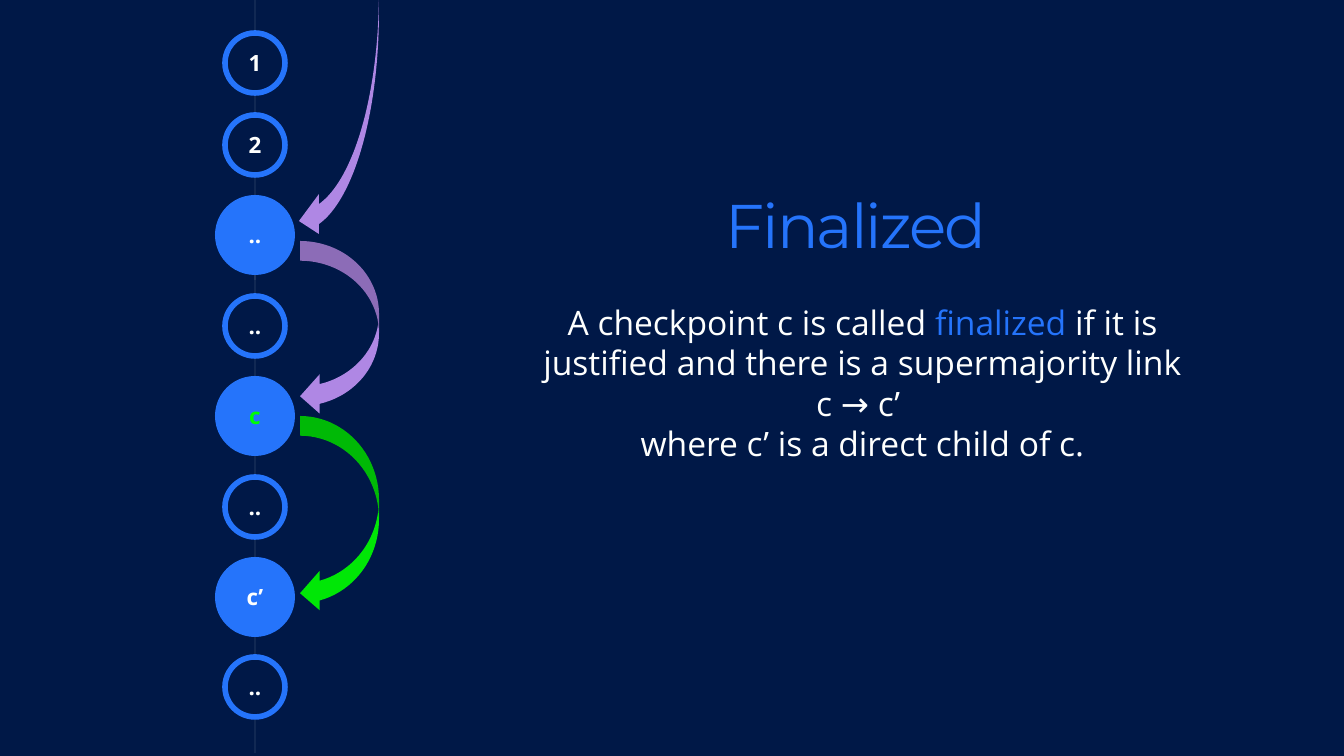
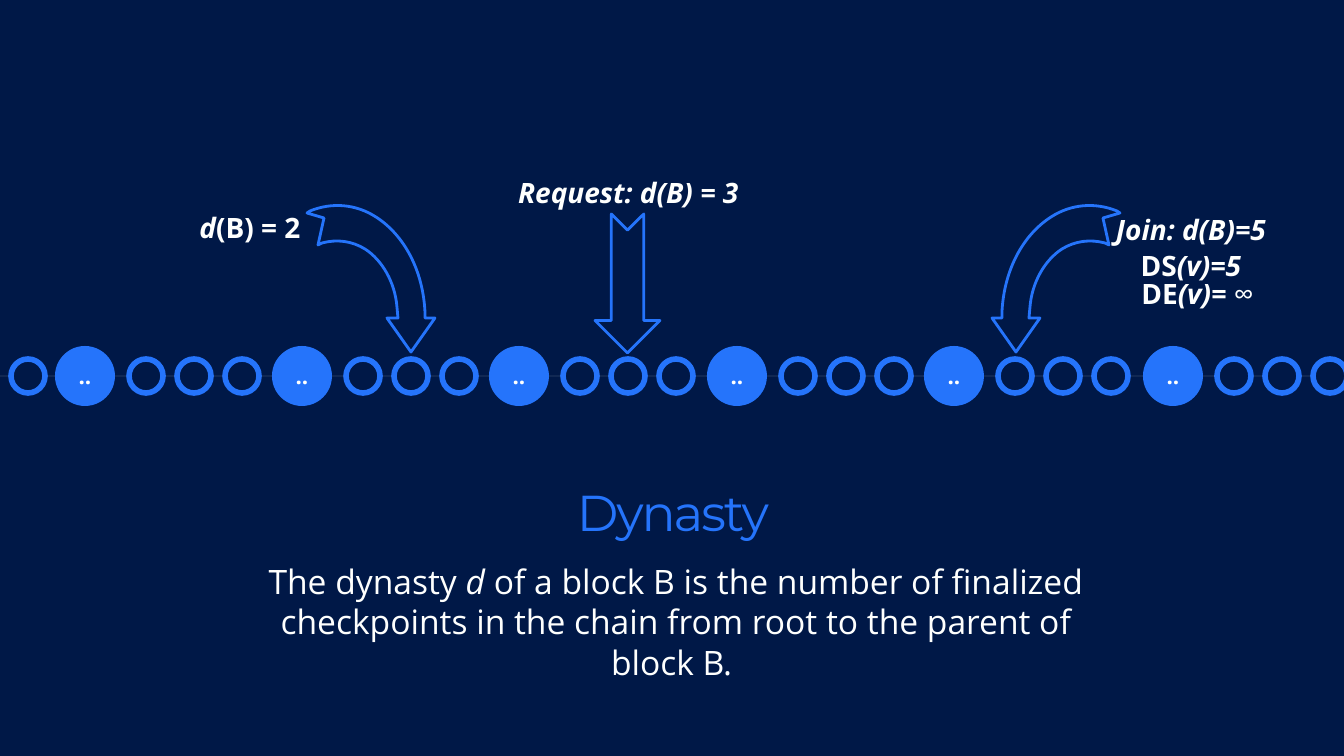
from lxml import etree
from pptx import Presentation
from pptx.dml.color import RGBColor
from pptx.enum.shapes import MSO_CONNECTOR, MSO_SHAPE
from pptx.enum.text import MSO_ANCHOR, MSO_AUTO_SIZE, PP_ALIGN
from pptx.oxml.ns import qn
from pptx.util import Pt

OVAL = MSO_SHAPE.OVAL
CURVE = MSO_SHAPE.CURVED_LEFT_ARROW
NOTCH = MSO_SHAPE.NOTCHED_RIGHT_ARROW
LINE = MSO_CONNECTOR.STRAIGHT
TOP, MIDDLE = MSO_ANCHOR.TOP, MSO_ANCHOR.MIDDLE
CENTER = PP_ALIGN.CENTER
FIXED = MSO_AUTO_SIZE.NONE
SCALE = 12192000 / 1344


class Theme:
    navy = RGBColor.from_string("001847")
    blue = RGBColor.from_string("2574FB")
    white = RGBColor.from_string("FEFFFE")
    green = RGBColor.from_string("00FE00")
    violet = RGBColor.from_string("C394F6")
    head = "Montserrat"
    text = "Open Sans"
    body, label, mark = 24, 20, 16
    ring, edge, rail = 4, 2, 0.5
    small, tiny, big = 60, 34, 80


def emu(*sizes):
    return [round(size * SCALE) for size in sizes]


def write(shape, runs, size, inset=0, face=Theme.text, space=None, anchor=TOP):
    frame = shape.text_frame
    frame.word_wrap = True
    frame.auto_size = FIXED
    frame.vertical_anchor = anchor
    frame.margin_left = frame.margin_right = 0
    frame.margin_top = frame.margin_bottom = emu(inset)[0]
    para = frame.paragraphs[0]
    para.alignment = CENTER
    para.line_spacing = space
    for text, color, style in runs:
        if text == "\n":
            para.add_line_break()
            continue
        run = para.add_run()
        run.text = text
        font = run.font
        font.name, font.size = face, Pt(size)
        font.bold, font.italic = "b" in style, "i" in style
        font.color.rgb = color
    return para


deck = Presentation()
deck.slide_width, deck.slide_height = emu(1344, 756)
back = deck.slide_master.background.fill
back.solid()
back.fore_color.rgb = Theme.navy

white, blue = Theme.white, Theme.blue
chain = [(255, 63, Theme.small, "1", white), (255, 145, Theme.small, "2", white)]
for step, (mark, color) in enumerate(
    [("..", white), ("..", white), ("c", Theme.green), ("..", white), ("c’", white), ("..", white)]
):
    size = Theme.small if step % 2 else Theme.big
    chain.append((255, 235 + (step * 452 + 4) // 5, size, mark, color))

row = [(28, 376, Theme.tiny, "", white)]
for mid in (85, 302, 519, 737, 954, 1173):
    row.append((mid, 376, 60, "..", white))
    row += [(mid + 61 + 48 * k, 376, Theme.tiny, "", white) for k in range(3)]

pages = [
    (
        "Finalized", 44, (710, 199, 292, 67), (535, 302, 655, 122),
        [(255, 275, 255, 753), (255, 93, 255, 280), (255, -62, 255, 32)], chain,
        [
            ("A checkpoint c is called ", white, ""),
            ("finalized ", blue, ""),
            ("if it is justified and there is a supermajority link c → c’ ", white, ""),
            ("\n", white, ""),
            ("where c’ is a direct child of c.", white, ""),
        ],
    ),
    (
        "Dynasty", 36, (527, 490, 292, 67), (268, 561, 816, 82),
        [(0, 376, 1344, 376)], row,
        [
            ("The dynasty ", white, ""),
            ("d", white, "i"),
            (" of a block B is the number of finalized checkpoints in the chain"
             " from root to the parent of block B. ", white, ""),
        ],
    ),
]

slides = []
faded = []
for name, size, place, area, rails, dots, words in pages:
    slide = deck.slides.add_slide(deck.slide_layouts[5])
    slides.append(slide)
    title = slide.shapes.title
    title.left, title.top, title.width, title.height = emu(*place)
    para = write(title, [(name, blue, "")], size, 5, Theme.head, 0.75)
    para.runs[0].font._element.set("spc", "-150")
    write(slide.shapes.add_textbox(*emu(*area)), words, Theme.body)

    for ends in rails:
        rail = slide.shapes.add_connector(LINE, *emu(*ends))
        rail.line.color.rgb = white
        rail.line.width = Pt(Theme.rail)
        etree.SubElement(rail._element.spPr, qn("a:effectLst"))
        faded.append((rail, 20))

    for x, y, wide, mark, color in dots:
        dot = slide.shapes.add_shape(OVAL, *emu(x - wide / 2, y - wide / 2, wide, wide))
        dot.shadow.inherit = False
        dot.fill.solid()
        full = wide == Theme.big or (dots is row and mark)
        dot.fill.fore_color.rgb = blue if full else Theme.navy
        if full:
            dot.line.fill.background()
        else:
            dot.line.color.rgb = blue
            dot.line.width = Pt(Theme.ring)
        if mark:
            write(dot, [(mark, color, "b")], Theme.mark, anchor=MIDDLE)

final, era = slides
for box, color in [
    ((300, 241, 79, 175), Theme.violet),
    ((300, 416, 79, 197), Theme.green),
    ((299, -227, 80, 468), Theme.violet),
]:
    link = final.shapes.add_shape(CURVE, *emu(*box))
    link.shadow.inherit = False
    link.fill.solid()
    link.fill.fore_color.rgb = color
    link.line.fill.background()
    faded.append((link, 90))

for shape, share in faded:
    tint = shape._element.spPr.find(".//" + qn("a:srgbClr"))
    etree.SubElement(tint, qn("a:alpha")).set("val", str(share * 1000))

bend = [
    [(24, 318)], [(0, 352)], [(-24, 318)], [(-13, 318)], [(-14, 307)],
    [(-16, 282), (-29, 260), (-46, 249)],
    [(-59, 241), (-74, 239), (-89, 243)],
    [(-93, 245)], [(-87, 218)], [(-104, 213)], [(-101, 211)],
    [(-79, 202), (-55, 204), (-35, 217)],
    [(-7, 235), (12, 270), (14, 312)],
    [(14, 318)], [(24, 318)],
]
crest = (-71, 206)

arrows = []
for tip, side in [(411, 1), (1016, -1)]:
    spots = [emu(tip + side * x, y) for x, y in [part[-1] for part in bend] + [crest]]
    pen = era.shapes.build_freeform(*spots[0])
    pen.add_line_segments(spots[1:], close=True)
    arrow = pen.convert_to_shape()
    arrows.append(arrow)
    trail = arrow._element.spPr.find(".//" + qn("a:path"))
    for child in list(trail):
        trail.remove(child)
    for order, part in enumerate(bend):
        tag = "a:cubicBezTo" if len(part) == 3 else "a:lnTo" if order else "a:moveTo"
        move = etree.SubElement(trail, qn(tag))
        for x, y in part:
            left, top = emu(tip + side * x, y)
            spot = etree.SubElement(move, qn("a:pt"))
            spot.set("x", str(left - arrow.left))
            spot.set("y", str(top - arrow.top))
    etree.SubElement(trail, qn("a:close"))

down = era.shapes.add_shape(NOTCH, *emu(558, 251, 139, 65))
down.rotation = 90
arrows.append(down)
for arrow in arrows:
    arrow.shadow.inherit = False
    arrow.fill.solid()
    arrow.fill.fore_color.rgb = Theme.navy
    arrow.line.color.rgb = blue
    arrow.line.width = Pt(Theme.edge)

for box, parts in [
    ((193, 199, 114, 47), [("d", "bi"), ("(B) = 2", "b")]),
    ((506, 164, 245, 50), [("Request: d(B) = 3", "bi")]),
    ((1102, 201, 178, 50), [("Join: d(B)=5", "bi")]),
    ((1102, 237, 178, 47), [("DS", "b"), ("(v)=5", "bi")]),
    ((1105, 265, 185, 50), [("DE", "b"), ("(v)= ", "bi"), ("∞", "")]),
]:
    label = era.shapes.add_textbox(*emu(*box))
    write(label, [(text, white, style) for text, style in parts], Theme.label, 5, space=1.2)

deck.save("out.pptx")
